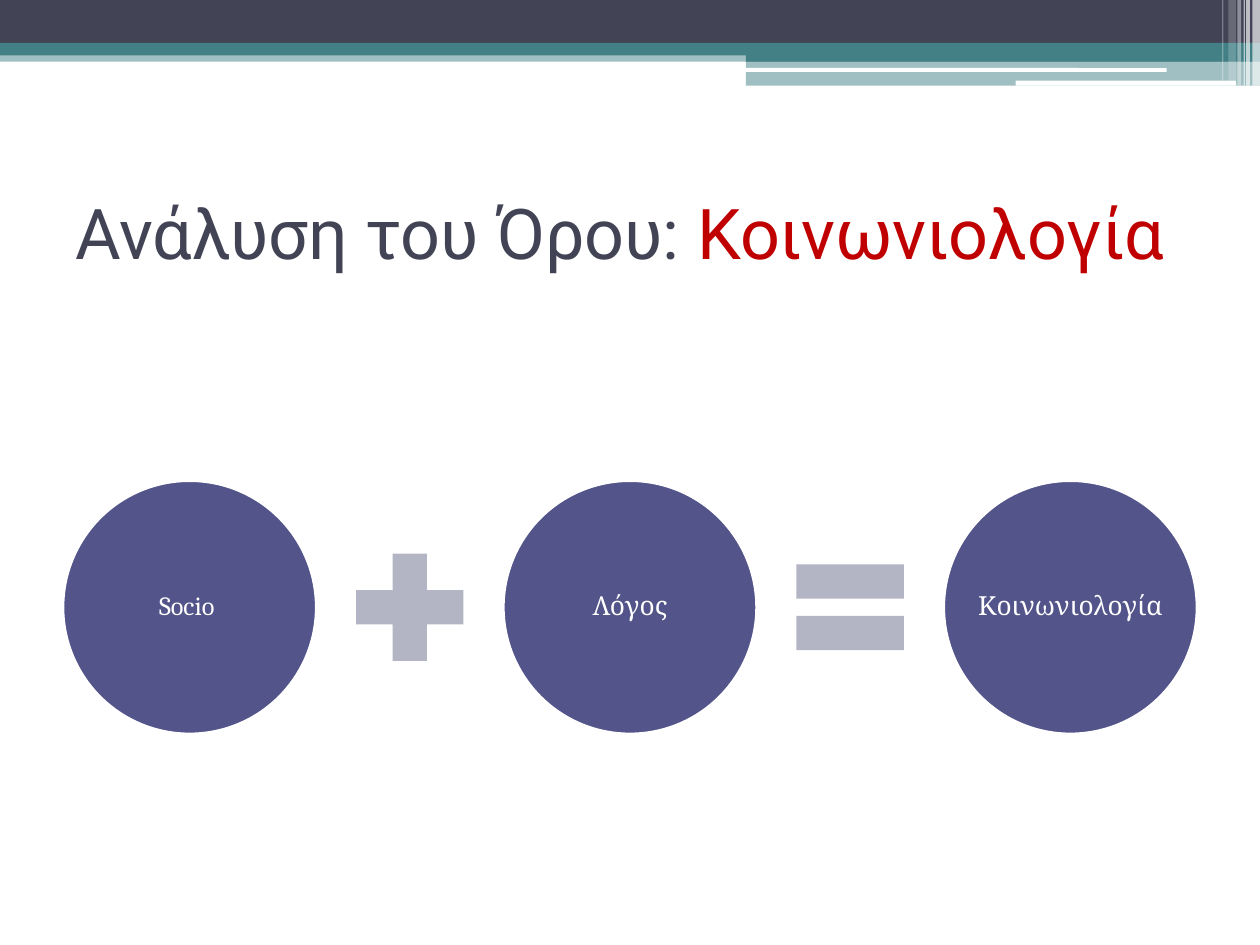
from lxml import etree
from pptx import Presentation
from pptx.dml.color import RGBColor
from pptx.enum.shapes import MSO_SHAPE
from pptx.enum.text import MSO_ANCHOR, PP_ALIGN
from pptx.oxml.ns import qn
from pptx.util import Inches, Pt

RECTANGLE = MSO_SHAPE.RECTANGLE
ROUNDED = MSO_SHAPE.ROUNDED_RECTANGLE
OVAL = MSO_SHAPE.OVAL
PLUS = MSO_SHAPE.MATH_PLUS
EQUAL = MSO_SHAPE.MATH_EQUAL
MIDDLE = MSO_ANCHOR.MIDDLE
CENTER = PP_ALIGN.CENTER

WHITE = RGBColor(0xFF, 0xFF, 0xFF)
SLATE = RGBColor(0x42, 0x44, 0x56)
TEAL = RGBColor(0x43, 0x80, 0x86)
RED = RGBColor(0xC0, 0x00, 0x00)
INDIGO = RGBColor(0x53, 0x54, 0x8A)
LAVENDER = RGBColor(0xB3, 0xB4, 0xC4)

SLIDE_WIDTH, SLIDE_HEIGHT = 10, 7.5
MARGIN = 0.05 * SLIDE_WIDTH
CONTENT_WIDTH = SLIDE_WIDTH - 2 * MARGIN
TERM_SIZE = 2.01
OPERATOR_SIZE = 1.16
TERM_STEP = (CONTENT_WIDTH - TERM_SIZE) / 2
EQUATION_MIDDLE = 4.82

BANDS = [
    (0, 0.4, 10, 0.09, TEAL, 50),
    (0, 0, 10, 0.34, SLATE, 100),
    (0, 0.34, 10, 0.1, TEAL, 100),
    (5.92, 0.39, 4.08, 0.1, TEAL, 100),
    (5.92, 0.48, 4.08, 0.2, TEAL, 50),
]
HIGHLIGHTS = [(5.91, 0.54, 3.35, 0.03), (8.06, 0.64, 1.75, 0.04)]
STRIPES = [
    (9.94, 0.06, 0.68, 65),
    (9.89, 0.03, 0.68, 65),
    (9.87, 0.01, 0.68, 60),
    (9.82, 0.03, 0.68, 40),
    (9.75, 0.06, 0.64, 20),
    (9.7, 0.01, 0.64, 30),
]
TERMS = ["Socio ", "Λόγος", "Κοινωνιολογία"]
OPERATORS = [PLUS, EQUAL]


def add_block(slide, preset, left, top, width, height, color, opacity=100):
    block = slide.shapes.add_shape(
        preset, Inches(left), Inches(top), Inches(width), Inches(height))
    block.shadow.inherit = False
    block.fill.solid()
    block.fill.fore_color.rgb = color
    block.line.fill.background()
    if opacity < 100:
        tint = block.fill._xPr.find(qn("a:solidFill"))[0]
        etree.SubElement(tint, qn("a:alpha"), val=str(opacity * 1000))
    return block


def style_run(run, font_name, size, color):
    run.font.name = font_name
    run.font.size = Pt(size)
    run.font.color.rgb = color


def add_header(slide):
    for left, top, width, height, color, opacity in BANDS:
        add_block(slide, RECTANGLE, left, top, width, height, color, opacity)
    for left, top, width, height in HIGHLIGHTS:
        add_block(slide, ROUNDED, left, top, width, height, WHITE)
    for left, width, height, opacity in STRIPES:
        add_block(slide, RECTANGLE, left, 0, width, height, WHITE, opacity)


def add_title(slide):
    title = slide.shapes.add_textbox(
        Inches(MARGIN), Inches(SLIDE_HEIGHT / 6), Inches(CONTENT_WIDTH), Inches(1.17))
    frame = title.text_frame
    frame.word_wrap = True
    frame.vertical_anchor = MIDDLE
    for wording, color in [("Ανάλυση του Όρου: ", SLATE), ("Κοινωνιολογία", RED)]:
        run = frame.paragraphs[0].add_run()
        run.text = wording
        style_run(run, "Roboto", 40, color)


def add_term(slide, wording, left):
    term = add_block(slide, OVAL, left, EQUATION_MIDDLE - TERM_SIZE / 2,
                     TERM_SIZE, TERM_SIZE, INDIGO)
    term.line.color.rgb = WHITE
    term.line.width = Pt(1.5)
    frame = term.text_frame
    frame.word_wrap = False
    frame.vertical_anchor = MIDDLE
    frame.margin_left = frame.margin_right = Inches(0.02)
    frame.margin_top = frame.margin_bottom = Inches(0.02)
    frame.text = wording
    paragraph = frame.paragraphs[0]
    paragraph.alignment = CENTER
    paragraph.line_spacing = 0.9
    style_run(paragraph.runs[0], "Cambria", 15, WHITE)


def add_equation(slide):
    operator_offset = (TERM_STEP + TERM_SIZE - OPERATOR_SIZE) / 2
    for column, wording in enumerate(TERMS):
        add_term(slide, wording, MARGIN + column * TERM_STEP)
    for column, operator in enumerate(OPERATORS):
        add_block(slide, operator, MARGIN + column * TERM_STEP + operator_offset,
                  EQUATION_MIDDLE - OPERATOR_SIZE / 2,
                  OPERATOR_SIZE, OPERATOR_SIZE, LAVENDER)


def main():
    presentation = Presentation()
    presentation.slide_width = Inches(SLIDE_WIDTH)
    presentation.slide_height = Inches(SLIDE_HEIGHT)
    slide = presentation.slides.add_slide(presentation.slide_layouts[6])
    add_header(slide)
    add_title(slide)
    add_equation(slide)
    presentation.save("out.pptx")


if __name__ == "__main__":
    main()
